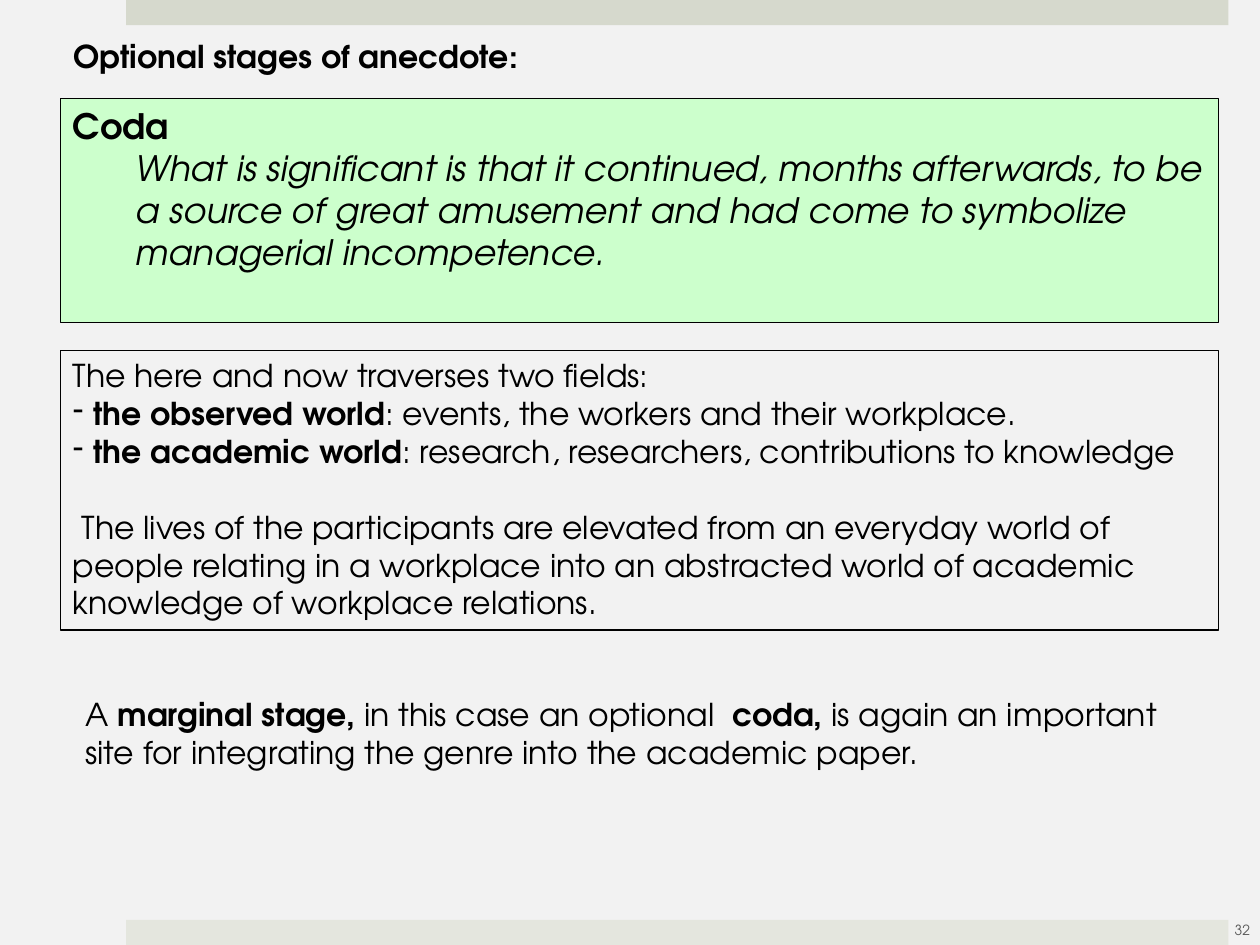
from lxml.etree import SubElement
from pptx import Presentation
from pptx.dml.color import RGBColor
from pptx.enum.shapes import MSO_SHAPE
from pptx.enum.text import MSO_ANCHOR, PP_ALIGN
from pptx.oxml.ns import qn
from pptx.util import Inches, Pt

FONT = "TeX Gyre Adventor"
BLACK = RGBColor(0x00, 0x00, 0x00)
GREY = RGBColor(0x59, 0x59, 0x59)
PAPER = RGBColor(0xF2, 0xF2, 0xF2)
TOP_BAND = RGBColor(0xD6, 0xD9, 0xCD)
BOTTOM_BAND = RGBColor(0xE4, 0xE6, 0xDE)
MINT = RGBColor(0xCC, 0xFF, 0xCC)


def add_rectangle(page, left, top, width, height, fill=None, outline=None):
    box = page.shapes.add_shape(MSO_SHAPE.RECTANGLE, Inches(left), Inches(top),
                                Inches(width), Inches(height))
    box.shadow.inherit = False
    if fill is None:
        box.fill.background()
    else:
        box.fill.solid()
        box.fill.fore_color.rgb = fill
    if outline is None:
        box.line.fill.background()
    else:
        box.line.color.rgb = outline
        box.line.width = Pt(0.75)
    prepare_frame(box.text_frame)
    return box


def add_text_box(page, left, top, width, height):
    box = page.shapes.add_textbox(Inches(left), Inches(top), Inches(width), Inches(height))
    prepare_frame(box.text_frame)
    return box


def prepare_frame(frame, anchor=MSO_ANCHOR.TOP):
    frame.word_wrap = True
    frame.vertical_anchor = anchor


def write_paragraph(para, spans, size=18, color=BLACK, align=PP_ALIGN.LEFT):
    """Fill a paragraph from (text, style) pairs; style is "", "b" or "i"."""
    para.alignment = align
    for text, style in spans:
        span = para.add_run()
        span.text = text
        span.font.name = FONT
        span.font.size = Pt(size)
        span.font.color.rgb = color
        span.font.bold = style == "b"
        span.font.italic = style == "i"


def indent(para, margin, first_line=0, bullet=None):
    properties = para._p.get_or_add_pPr()
    properties.set("marL", str(Inches(margin)))
    properties.set("indent", str(Inches(first_line)))
    if bullet:
        SubElement(properties, qn("a:buChar")).set("char", bullet)


def add_title(page):
    title = page.shapes.title
    title.left, title.top = Inches(0.48), Inches(0.24)
    title.width, title.height = Inches(8.83), Inches(0.4)
    prepare_frame(title.text_frame)
    write_paragraph(title.text_frame.paragraphs[0],
                    [("Optional stages of anecdote:", "b")])


def add_coda(page):
    frame = add_rectangle(page, 0.48, 0.78, 9.19, 1.78, MINT, BLACK).text_frame
    write_paragraph(frame.paragraphs[0], [("Coda", "b")], size=20)
    quote = frame.add_paragraph()
    write_paragraph(quote, [(
        "What is significant is that it continued, months afterwards, to be a source of "
        "great amusement and had come to symbolize managerial incompetence.", "i")], size=20)
    indent(quote, 0.5)


def add_fields(page):
    frame = add_rectangle(page, 0.48, 2.78, 9.19, 2.22, outline=BLACK).text_frame
    write_paragraph(frame.paragraphs[0], [("The here and now traverses two fields:", "")])
    fields = [
        ("the observed world", ": events, the workers and their workplace."),
        ("the academic world", ": research, researchers, contributions to knowledge"),
    ]
    for name, contents in fields:
        para = frame.add_paragraph()
        write_paragraph(para, [(name, "b"), (contents, "")])
        indent(para, 0.16, -0.16, bullet="-")
    effect = frame.add_paragraph()
    write_paragraph(effect, [(
        "The lives of the participants are elevated from an everyday world of people "
        "relating in a workplace into an abstracted world of academic knowledge of "
        "workplace relations.", "")])
    indent(effect, 0, 0.07)
    effect.space_before = Pt(21.7)


def add_conclusion(page):
    frame = add_text_box(page, 0.58, 5.47, 9.08, 0.71).text_frame
    write_paragraph(frame.paragraphs[0], [
        ("A ", ""),
        ("marginal stage,", "b"),
        (" in this case an optional  ", ""),
        ("coda, ", "b"),
        ("is again an important site for integrating the genre into the academic paper.", ""),
    ])


def add_page_number(page):
    frame = add_text_box(page, 9.61, 7.18, 0.5, 0.4).text_frame
    prepare_frame(frame, MSO_ANCHOR.MIDDLE)
    write_paragraph(frame.paragraphs[0], [("32", "")], size=8, color=GREY,
                    align=PP_ALIGN.CENTER)


def main():
    deck = Presentation()
    deck.slide_width, deck.slide_height = Inches(10), Inches(7.5)
    page = deck.slides.add_slide(deck.slide_layouts[5])
    page.background.fill.solid()
    page.background.fill.fore_color.rgb = PAPER
    add_rectangle(page, 1, 0, 8.75, 0.2, TOP_BAND)
    add_rectangle(page, 1, 7.3, 8.75, 0.2, BOTTOM_BAND)
    add_title(page)
    add_coda(page)
    add_fields(page)
    add_conclusion(page)
    add_page_number(page)
    deck.save("out.pptx")


if __name__ == "__main__":
    main()
